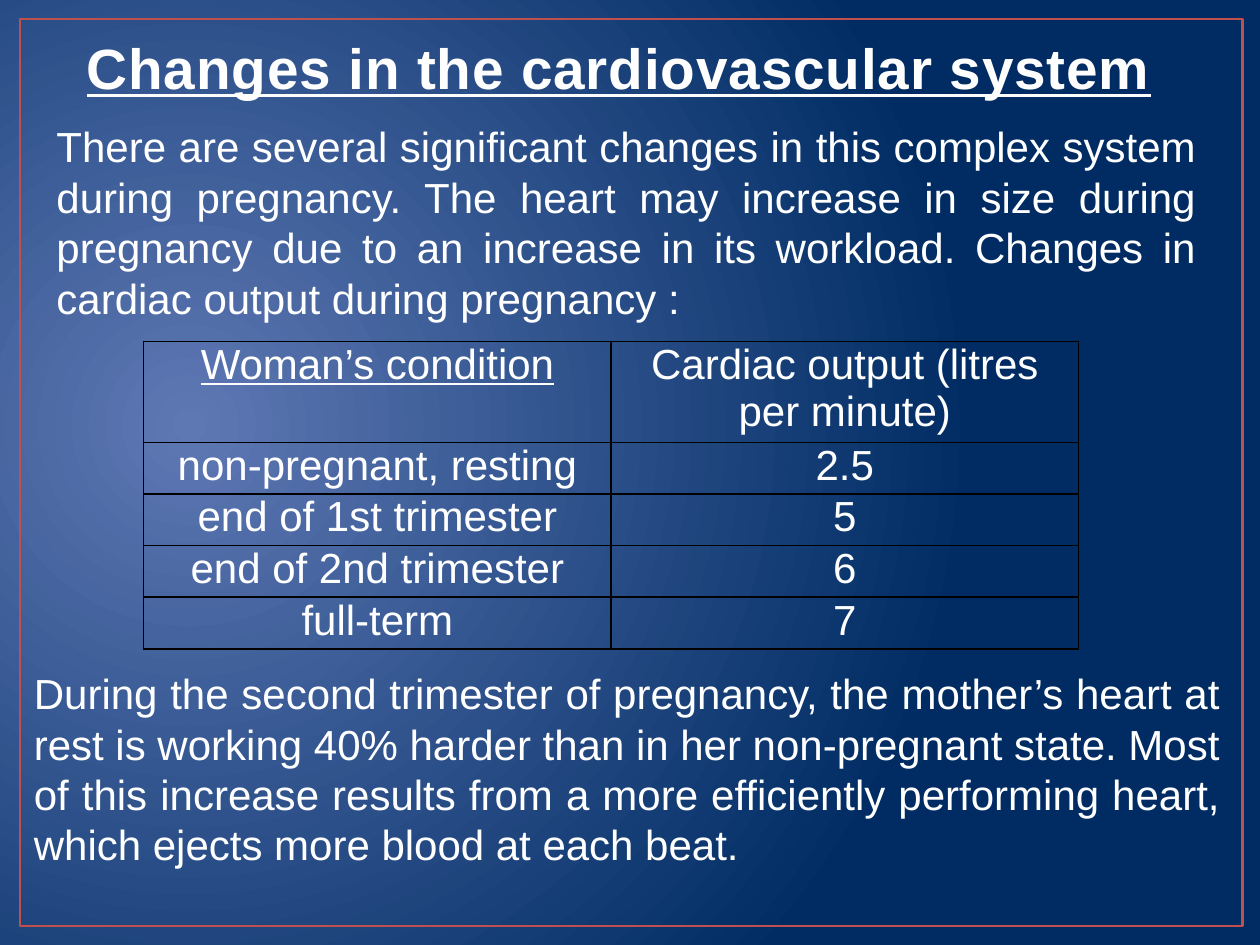
from lxml.etree import SubElement
from pptx import Presentation
from pptx.dml.color import RGBColor
from pptx.enum.shapes import MSO_SHAPE as Shape
from pptx.enum.text import MSO_ANCHOR as Anchor, PP_ALIGN as Align
from pptx.oxml import parse_xml
from pptx.oxml.ns import nsdecls, qn
from pptx.util import Inches, Pt

FONT = "Arial"
WHITE = "FFFFFF"
BODY_SIZE = 24
BACKGROUND = [(0, "5E78B4"), (1, "002C63")]
TITLE = "Changes in the cardiovascular system"
PARAGRAPHS = [
    ((0.35, 0.91, 9.24, 1.72),
     "There are several significant changes in this complex system during "
     "pregnancy. The heart may increase in size during pregnancy due to an "
     "increase in its workload. Changes in cardiac output during pregnancy :"),
    ((0.17, 5.25, 9.61, 1.72),
     "During the second trimester of pregnancy, the mother’s heart at rest is "
     "working 40% harder than in her non-pregnant state. Most of this increase "
     "results from a more efficiently performing heart, which ejects more "
     "blood at each beat."),
]
CARDIAC_OUTPUT = [
    ("Woman’s condition", "Cardiac output (litres per minute)"),
    ("non-pregnant, resting", "2.5"),
    ("end of 1st trimester", "5"),
    ("end of 2nd trimester", "6"),
    ("full-term", "7"),
]
TABLE_BOX = (1.14, 2.71, 7.42, 2.44)
HEADER_HEIGHT, ROW_HEIGHT = 0.8, 0.41


def color(hex_string):
    return RGBColor.from_string(hex_string)


def inches(box):
    return [Inches(value) for value in box]


def line_xml(tag, width, hex_string):
    return parse_xml(
        f'<a:{tag} {nsdecls("a")} w="{Pt(width)}"><a:solidFill>'
        f'<a:srgbClr val="{hex_string}"/></a:solidFill></a:{tag}>')


def write(frame, text, align, size=BODY_SIZE, hex_string=WHITE):
    paragraph = frame.paragraphs[0]
    paragraph.alignment = align
    run = paragraph.add_run()
    run.text = text
    run.font.name = FONT
    run.font.size = Pt(size)
    run.font.color.rgb = color(hex_string)
    return run


def add_text(slide, box, *style):
    frame = slide.shapes.add_textbox(*inches(box)).text_frame
    frame.word_wrap = True
    return frame, write(frame, *style)


def paint_background(slide):
    fill = slide.background.fill
    fill.gradient()
    for stop, (position, hex_string) in zip(fill.gradient_stops, BACKGROUND):
        stop.position = position
        stop.color.rgb = color(hex_string)
    gradient = slide.element.find(".//" + qn("a:gradFill"))
    gradient.replace(gradient.find(qn("a:lin")), parse_xml(
        f'<a:path {nsdecls("a")} path="circle">'
        '<a:fillToRect l="15000" t="50000" r="85000" b="60000"/></a:path>'))


def add_frame(slide):
    frame = slide.shapes.add_shape(
        Shape.RECTANGLE, *inches((0.16, 0.15, 9.7, 7.2)))
    frame.shadow.inherit = False
    frame.fill.background()
    frame.line.color.rgb = color("C0504D")
    frame.line.width = Pt(1.5)


def add_title(slide):
    frame, run = add_text(slide, (0.59, 0.21, 9, 0.64),
                          TITLE, Align.LEFT, 32.4, "FFFEFE")
    frame.vertical_anchor = Anchor.BOTTOM
    run.font.bold = run.font.underline = True
    properties = run.font._element if hasattr(run.font, "_element") else run._r.rPr
    properties.set("spc", "50")
    properties.insert(0, line_xml("ln", 1.05, "254061"))


def add_output_table(slide):
    table = slide.shapes.add_table(
        len(CARDIAC_OUTPUT), len(CARDIAC_OUTPUT[0]), *inches(TABLE_BOX)).table
    table.first_row = table.horz_banding = False
    for row_index, values in enumerate(CARDIAC_OUTPUT):
        table.rows[row_index].height = Inches(
            ROW_HEIGHT if row_index else HEADER_HEIGHT)
        for column_index, value in enumerate(values):
            cell = table.cell(row_index, column_index)
            cell.margin_left = cell.margin_right = Inches(0.07)
            cell.margin_top = cell.margin_bottom = 0
            run = write(cell.text_frame, value, Align.CENTER)
            run.font.underline = (row_index, column_index) == (0, 0)
            cell.fill.background()
            properties = cell._tc.get_or_add_tcPr()
            for position, tag in enumerate(("lnL", "lnR", "lnT", "lnB")):
                properties.insert(position, line_xml(tag, 1, "000000"))


def main():
    presentation = Presentation()
    presentation.slide_width = Inches(10)
    presentation.slide_height = Inches(7.5)
    slide = presentation.slides.add_slide(presentation.slide_layouts[6])
    paint_background(slide)
    add_frame(slide)
    add_title(slide)
    for box, text in PARAGRAPHS:
        add_text(slide, box, text, Align.JUSTIFY)
    add_output_table(slide)
    presentation.save("out.pptx")


if __name__ == "__main__":
    main()
